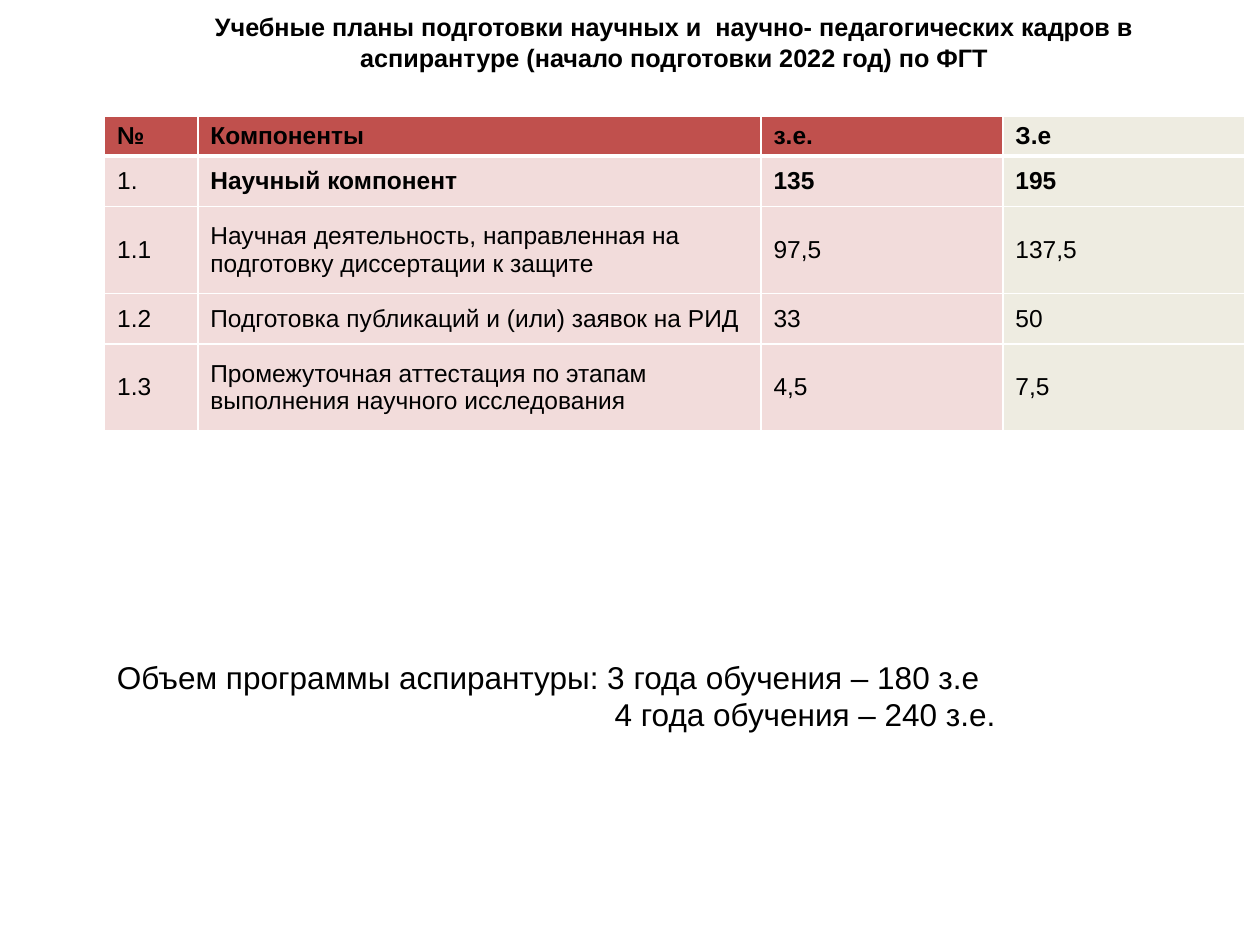
"""Build the slide comparing postgraduate curricula in credit units."""
from lxml import etree
from pptx import Presentation
from pptx.dml.color import RGBColor
from pptx.enum.text import MSO_ANCHOR, MSO_AUTO_SIZE, PP_ALIGN
from pptx.oxml.ns import qn
from pptx.util import Inches, Pt

MIDDLE, CENTER = MSO_ANCHOR.MIDDLE, PP_ALIGN.CENTER
COLORS = {"text": "000000", "header": "C0504D", "body": "F2DCDB",
          "last": "EEECE1", "border": "FFFFFF"}

TITLE = ("Учебные планы подготовки научных и  научно- педагогических кадров в "
         "аспирантуре (начало подготовки 2022 год) по ФГТ")
ROWS = [
    ("№", "Компоненты", "з.е.", "З.е"),
    ("1.", "Научный компонент", "135", "195"),
    ("1.1", "Научная деятельность, направленная на подготовку диссертации к защите",
     "97,5", "137,5"),
    ("1.2", "Подготовка публикаций и (или) заявок на РИД", "33", "50"),
    ("1.3", "Промежуточная аттестация по этапам выполнения научного исследования",
     "4,5", "7,5"),
]
VOLUME = [("Объем программы аспирантуры: 3 года обучения – 180 з.е", 0),
          ("4 года обучения – 240 з.е.", 3.95)]

LEFT = 0.83
COL_WIDTHS = (0.74, 4.47, 1.92, 1.92)
ROW_HEIGHTS = (0.31, 0.4, 0.69, 0.4, 0.69)


def format_font(font, size, bold=False):
    for name, value in {"name": "Arial", "size": Pt(size), "bold": bold}.items():
        setattr(font, name, value)
    font.color.rgb = RGBColor.from_string(COLORS["text"])


def place(sp, left, top, width, height):
    for name, value in {"left": left, "top": top, "width": width, "height": height}.items():
        setattr(sp, name, Inches(value))


def add_borders(cell, widths):
    tc_pr = cell._tc.get_or_add_tcPr()
    for i, (side, width) in enumerate(widths.items()):
        line = etree.Element(qn(f"a:ln{side}"), w=str(Pt(width)))
        fill = etree.SubElement(line, qn("a:solidFill"))
        etree.SubElement(fill, qn("a:srgbClr"), val=COLORS["border"])
        tc_pr.insert(i, line)


def add_title(slide):
    sp = slide.shapes.title
    place(sp, 0.98, 0.01, 8.74, 0.69)
    tf = sp.text_frame
    tf.text = TITLE
    tf.auto_size = MSO_AUTO_SIZE.NONE
    tf.vertical_anchor = MIDDLE
    tf.margin_bottom = Inches(0.1)
    p = tf.paragraphs[0]
    p.alignment = CENTER
    p.line_spacing = Pt(17.7)
    format_font(p.runs[0].font, 14.4, True)


def add_curriculum(slide):
    table = slide.shapes.add_table(
        len(ROWS), len(COL_WIDTHS), Inches(LEFT), Inches(0.92),
        Inches(sum(COL_WIDTHS)), Inches(sum(ROW_HEIGHTS))).table
    for col, width in zip(table.columns, COL_WIDTHS):
        col.width = Inches(width)
    for r, (values, height) in enumerate(zip(ROWS, ROW_HEIGHTS)):
        table.rows[r].height = Inches(height)
        for c, value in enumerate(values):
            cell = table.cell(r, c)
            cell.text = value
            cell.vertical_anchor = MIDDLE
            bold = r == 0 or (r == 1 and c > 0)
            format_font(cell.text_frame.paragraphs[0].runs[0].font, 14, bold)
            is_last = c == len(COL_WIDTHS) - 1
            fill = "last" if is_last else "body" if r else "header"
            cell.fill.solid()
            cell.fill.fore_color.rgb = RGBColor.from_string(COLORS[fill])
            add_borders(cell, {"L": 1, "R": 1, "T": 3 if r == 1 else 1,
                               "B": 1 if r else 3})


def add_volume(slide):
    sp = slide.shapes.add_textbox(0, 0, 0, 0)
    place(sp, LEFT, 5.17, 8.82, 0.71)
    tf = sp.text_frame
    tf.word_wrap = True
    for i, (text, indent) in enumerate(VOLUME):
        p = tf.add_paragraph() if i else tf.paragraphs[0]
        r = p.add_run()
        r.text = text
        format_font(r.font, 18)
        if indent:
            p._p.get_or_add_pPr().set("marL", str(Inches(indent)))


def main():
    prs = Presentation()
    prs.slide_width, prs.slide_height = Inches(10), Inches(7.5)
    slide = prs.slides.add_slide(prs.slide_layouts[5])
    add_title(slide)
    add_curriculum(slide)
    add_volume(slide)
    prs.save("out.pptx")


if __name__ == "__main__":
    main()
